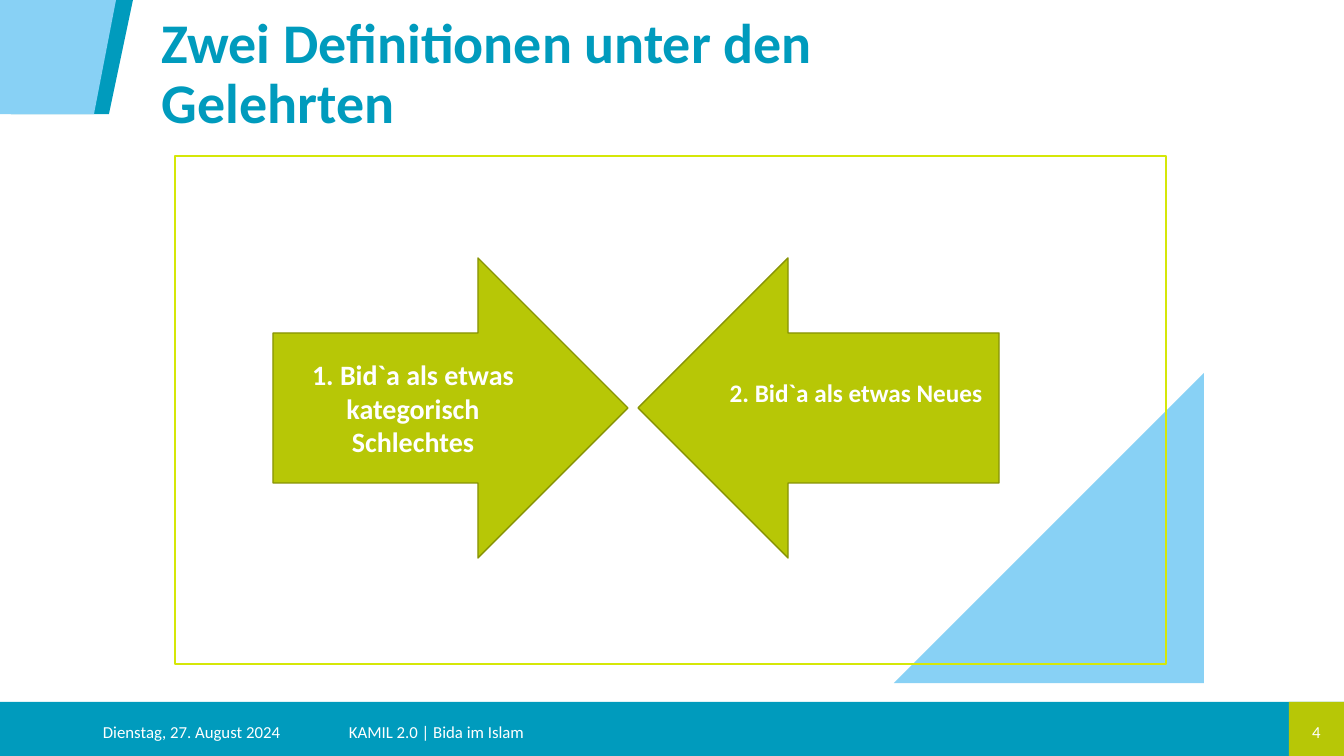
from pptx import Presentation
from pptx.dml.color import RGBColor
from pptx.enum.shapes import MSO_SHAPE
from pptx.enum.text import MSO_ANCHOR, PP_ALIGN
from pptx.util import Emu, Pt

EMU_PER_PX = 914400 / 100.8
SLIDE_WIDTH, SLIDE_HEIGHT = 1344, 756
FONT_NAME = "Calibri"

TEAL = RGBColor(0x00, 0x9B, 0xBD)
SKY = RGBColor(0x88, 0xD1, 0xF5)
LIME = RGBColor(0xB7, 0xC7, 0x06)
BRIGHT_LIME = RGBColor(0xD5, 0xE7, 0x08)
OLIVE = RGBColor(0x87, 0x93, 0x04)
WHITE = RGBColor(0xFF, 0xFF, 0xFF)


def px(length):
    return Emu(round(length * EMU_PER_PX))


def style_shape(shape, fill=None, line=None):
    shape.shadow.inherit = False
    if fill is None:
        shape.fill.background()
    else:
        shape.fill.solid()
        shape.fill.fore_color.rgb = fill
    if line is None:
        shape.line.fill.background()
    else:
        shape.line.color.rgb = line
        shape.line.width = Pt(1)


def add_preset(slide, kind, box, fill=None, line=None):
    shape = slide.shapes.add_shape(kind, *map(px, box))
    style_shape(shape, fill, line)
    return shape


def add_outline(slide, points, fill):
    builder = slide.shapes.build_freeform(*points[0], scale=EMU_PER_PX)
    builder.add_line_segments(points[1:], close=True)
    style_shape(builder.convert_to_shape(), fill)


def write_text(shape, text, size=12, color=WHITE, bold=False,
               align=PP_ALIGN.LEFT, line_spacing=None, bottom=5):
    frame = shape.text_frame
    frame.word_wrap = True
    frame.vertical_anchor = MSO_ANCHOR.MIDDLE
    frame.margin_bottom = px(bottom)
    paragraph = frame.paragraphs[0]
    paragraph.text = text
    paragraph.alignment = align
    paragraph.line_spacing = line_spacing
    font = paragraph.runs[0].font
    font.name = FONT_NAME
    font.size = Pt(size)
    font.bold = bold
    font.color.rgb = color


def add_text(slide, box, text, **text_format):
    write_text(slide.shapes.add_textbox(*map(px, box)), text, **text_format)


def add_arrow(slide, kind, box, text, **text_format):
    arrow = add_preset(slide, kind, box, LIME, OLIVE)
    write_text(arrow, text, bold=True, align=PP_ALIGN.CENTER, **text_format)


def main():
    presentation = Presentation()
    presentation.slide_width = px(SLIDE_WIDTH)
    presentation.slide_height = px(SLIDE_HEIGHT)
    slide = presentation.slides.add_slide(presentation.slide_layouts[6])

    # Footer bands
    add_preset(slide, MSO_SHAPE.RECTANGLE, (0, 702, SLIDE_WIDTH, 54), TEAL)
    add_preset(slide, MSO_SHAPE.RECTANGLE, (1289, 702, 55, 54), LIME)

    # Corner triangle with its right angle at the bottom right, and frame
    triangle = add_preset(slide, MSO_SHAPE.RIGHT_TRIANGLE,
                          (894, 373, 310, 310), SKY)
    triangle.rotation = 270
    add_preset(slide, MSO_SHAPE.RECTANGLE, (175, 156, 991, 508),
               line=BRIGHT_LIME)

    # Slanted corner flags
    add_outline(slide, [(11, 0), (133, 0), (109, 114), (11, 114)], TEAL)
    add_outline(slide, [(0, 0), (116, 0), (94, 114), (0, 114)], SKY)

    # Footer texts
    add_text(slide, (93, 712, 238, 40), "Dienstag, 27. August 2024")
    add_text(slide, (339, 712, 913, 40), "KAMIL 2.0 | Bida im Islam")
    add_text(slide, (1289, 712, 55, 40), "4", align=PP_ALIGN.CENTER)

    # Title
    add_text(slide, (152, 23, 816, 105), "Zwei Definitionen unter den Gelehrten",
             size=40, color=TEAL, bold=True, line_spacing=0.9)

    # Opposing arrows; the second text sits above the middle
    add_arrow(slide, MSO_SHAPE.RIGHT_ARROW, (273, 258, 355, 300),
              "1. Bid`a als etwas kategorisch Schlechtes", size=20)
    add_arrow(slide, MSO_SHAPE.LEFT_ARROW, (638, 258, 361, 300),
              "2. Bid`a als etwas Neues", size=18, bottom=36)

    presentation.save("out.pptx")


if __name__ == "__main__":
    main()
